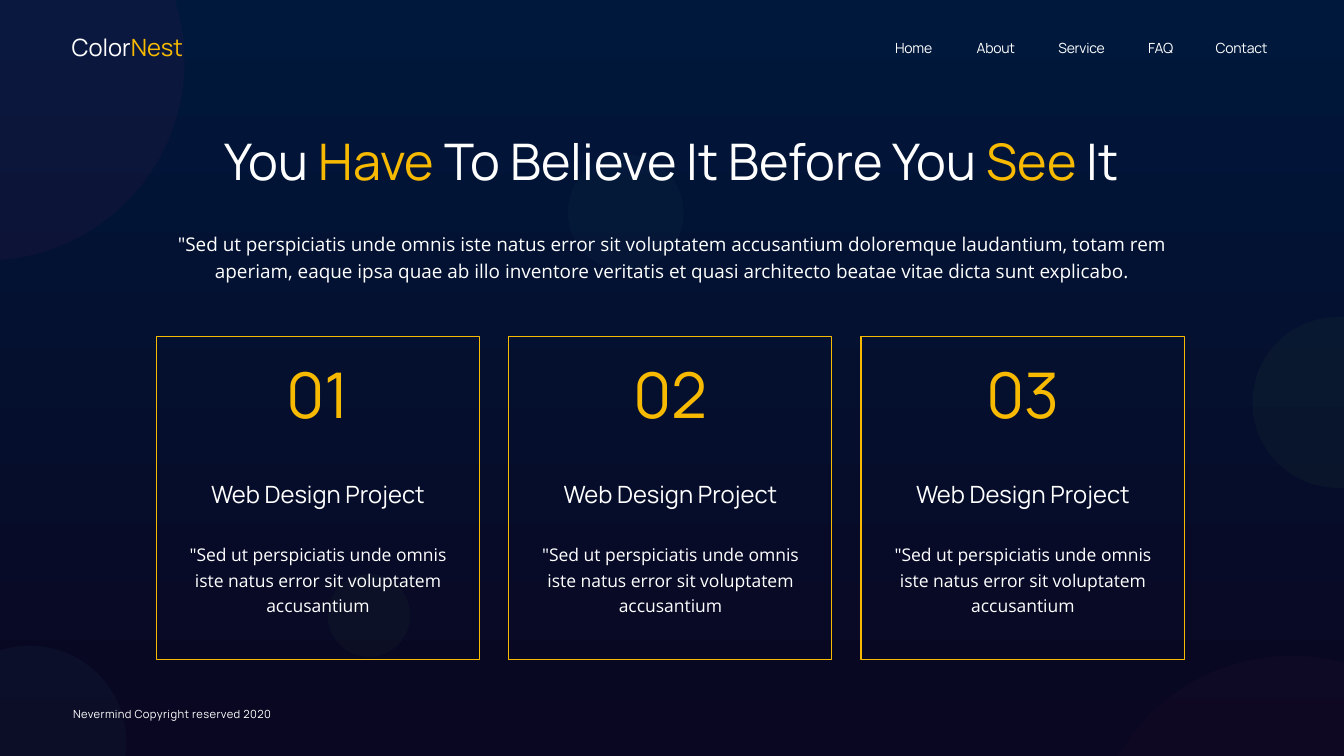
import dataclasses

import lxml.etree
import pptx
import pptx.dml.color
import pptx.enum.shapes
import pptx.enum.text
import pptx.oxml.ns
import pptx.util

Align = pptx.enum.text.PP_ALIGN
Anchor = pptx.enum.text.MSO_ANCHOR
Kind = pptx.enum.shapes.MSO_SHAPE
qn = pptx.oxml.ns.qn

COLS, ROWS = 80, 45
CELL = pptx.util.Inches(15 / ROWS)


@dataclasses.dataclass(frozen=True)
class Theme:
    white: str = "FFFFFF"
    gold: str = "F7BA01"
    pink: str = "CB2A7A"
    lime: str = "89FA4E"
    aqua: str = "72FDEA"
    night: str = "090721"
    navy: str = "00183C"
    head: str = "Manrope"
    body: str = "Open Sans"
    digit: int = 90
    title: int = 72
    label: int = 34
    lead: int = 27
    note: int = 25
    menu: int = 20
    foot: int = 16


def rgb(code):
    return pptx.dml.color.RGBColor.from_string(code)


def span(cells):
    return pptx.util.Emu(round(cells * CELL))


class Page:
    """Draws on one slide; boxes are (column, row, columns, rows)."""

    def __init__(self, deck, theme):
        self.theme = theme
        self.slide = deck.slides.add_slide(deck.slide_layouts[1])

    def backdrop(self, low, high):
        fill = self.slide.background.fill
        fill.gradient()
        fill.gradient_angle = 90
        for stop, code in zip(fill.gradient_stops, (low, high)):
            stop.color.rgb = rgb(code)

    def circle(self, col, row, size, code, alpha):
        """Add a faint disc; alpha is its opacity in percent."""
        disc = self.shape(Kind.OVAL, (col, row, size, size))
        disc.fill.solid()
        disc.fill.fore_color.rgb = rgb(code)
        disc.line.fill.background()
        tint = disc._element.spPr.find(".//" + qn("a:srgbClr"))
        lxml.etree.SubElement(tint, qn("a:alpha"), val=str(alpha * 1000))

    def frame(self, box):
        edge = self.shape(Kind.RECTANGLE, box)
        edge.fill.background()
        edge.line.color.rgb = rgb(self.theme.gold)
        edge.line.width = pptx.util.Pt(2)

    def shape(self, kind, box):
        item = self.slide.shapes.add_shape(kind, *map(span, box))
        item.shadow.inherit = False
        return item

    def text(self, box, words, size, **style):
        item = self.slide.shapes.add_textbox(*map(span, box))
        self.typeset(item.text_frame, words, size, **style)

    def holder(self, index, box, words, size, **style):
        """Fill a placeholder and bring it above the backdrop."""
        item = self.slide.placeholders[index]
        item.left, item.top, item.width, item.height = map(span, box)
        self.slide.shapes._spTree.append(item._element)
        self.typeset(item.text_frame, words, size, **style)

    def typeset(self, frame, words, size, face=None, code=None,
                align=Align.CENTER, lead=0.9, anchor=Anchor.TOP, track=0):
        """Set one paragraph; words between asterisks turn gold."""
        frame.word_wrap = True
        frame.auto_size = pptx.enum.text.MSO_AUTO_SIZE.NONE
        frame.vertical_anchor = anchor
        frame.margin_left = frame.margin_right = pptx.util.Inches(0.06)
        frame.margin_top = frame.margin_bottom = pptx.util.Inches(0.06)
        para = frame.paragraphs[0]
        para.alignment, para.line_spacing = align, lead
        para.space_before = pptx.util.Pt(0)
        props = para._p.get_or_add_pPr()
        props.set("marL", "0")
        props.set("indent", "0")
        lxml.etree.SubElement(props, qn("a:buNone"))
        para.font.name = face or self.theme.head
        para.font.size = pptx.util.Pt(size)
        para.font.color.rgb = rgb(code or self.theme.white)
        for index, part in enumerate(words.split("*")):
            if not part:
                continue
            run = para.add_run()
            run.text = part
            if index % 2:
                run.font.color.rgb = rgb(self.theme.gold)
            if track:
                run._r.get_or_add_rPr().set("spc", str(track))

    def card(self, col, row, size, number, label, note):
        theme = self.theme
        self.frame((col, row, size, size))
        self.text((col + 3.18, row + 1.47, 12.87, 5.5), number,
                  theme.digit, code=theme.gold)
        self.text((col + 1.68, row + 8.55, 15.9, 3.3), label, theme.label)
        self.text((col + 1.68, row + 11.94, 15.9, 5.5), note,
                  theme.note, face=theme.body, lead=1.2)


def main():
    deck = pptx.Presentation()
    deck.slide_width, deck.slide_height = span(COLS), span(ROWS)
    theme = Theme()
    page = Page(deck, theme)

    page.backdrop(theme.night, theme.navy)
    for disc in (
        (65, 39.03, 23.73, theme.pink, 3),
        (74.55, 18.87, 10.17, theme.lime, 3),
        (33.8, 9.2, 6.9, theme.aqua, 2),
        (-4, 38.43, 11.52, theme.aqua, 3),
        (19.5, 34.17, 4.92, theme.lime, 3),
        (-12.75, -8.22, 23.73, theme.pink, 5),
    ):
        page.circle(*disc)

    page.text((4.08, 1.83, 7.77, 2.31), "Color*Nest*", theme.label,
              align=Align.LEFT, lead=0.7, anchor=Anchor.MIDDLE)
    col, gap = 53.1, 2.07
    for name, width in (("Home", 2.79), ("About", 2.79), ("Service", 3.27),
                        ("FAQ", 1.95), ("Contact", 3.63)):
        page.text((col, 2.16, width, 1.5), name, theme.menu,
                  align=Align.LEFT, lead=1.0, track=-40)
        col += width + gap

    page.holder(0, (6.06, 8, 67.86, 4.5),
                "You *Have* To Believe It Before You *See* It", theme.title)
    page.holder(1, (9.66, 13.41, 60.66, 4.71),
                '"Sed ut perspiciatis unde omnis iste natus error sit '
                "voluptatem accusantium doloremque laudantium, totam rem "
                "aperiam, eaque ipsa quae ab illo inventore veritatis et "
                "quasi architecto beatae vitae dicta sunt explicabo.",
                theme.lead, face=theme.body, lead=1.2)

    for index in range(3):
        page.card(9.3 + 20.98 * index, 20.04, 19.23, f"{index + 1:02}",
                  "Web Design Project",
                  '"Sed ut perspiciatis unde omnis iste natus error sit '
                  "voluptatem accusantium")

    page.text((4.17, 41.91, 13.14, 1.32), "Nevermind Copyright reserved 2020",
              theme.foot, align=Align.LEFT, lead=1.0, track=60)
    deck.save("out.pptx")


if __name__ == "__main__":
    main()
